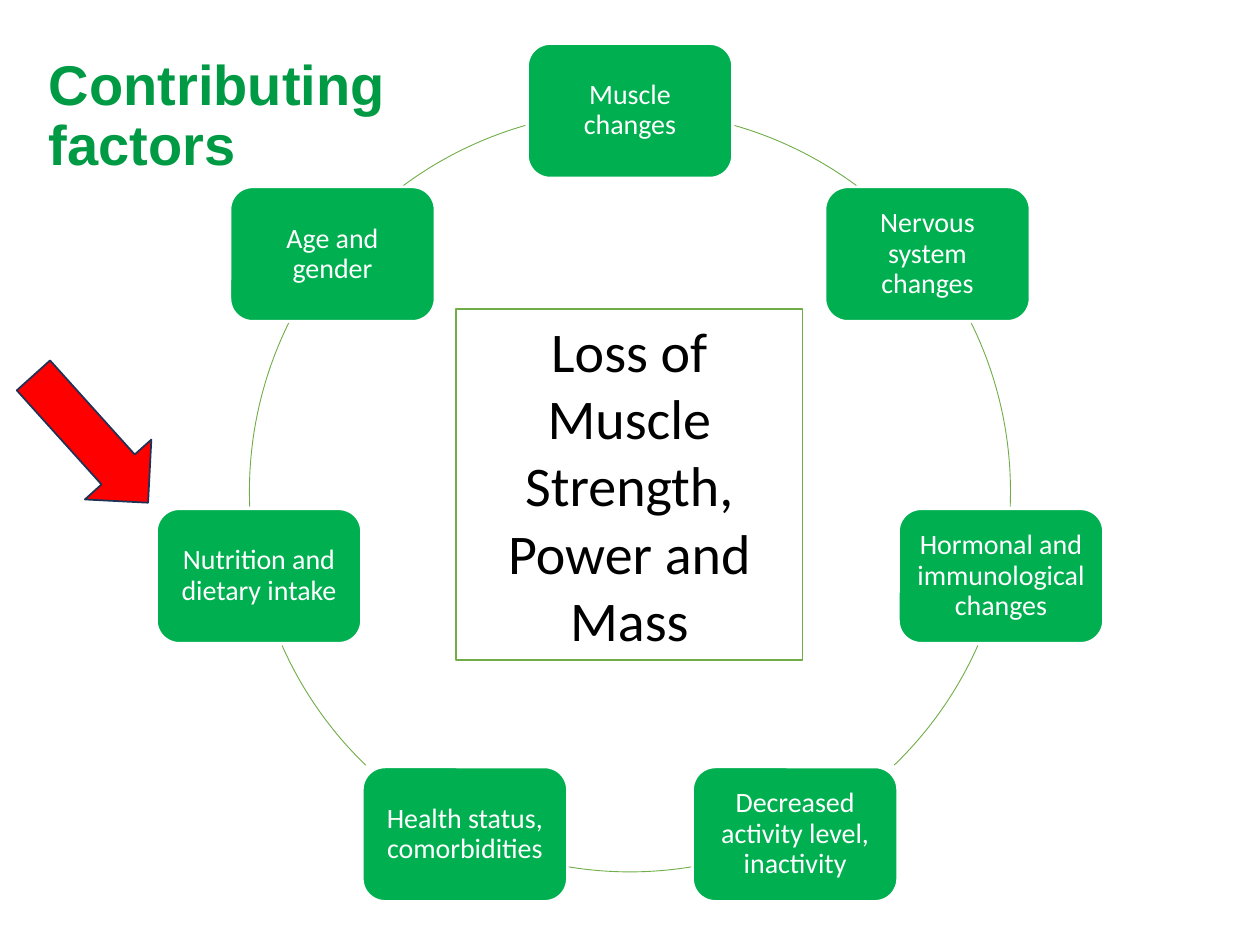
import math
from dataclasses import dataclass
from typing import Any

from pptx import Presentation
from pptx import util as u
from pptx.dml.color import RGBColor
from pptx.enum import shapes, text

COLUMNS, ROWS = 100, 75
CENTER_COLUMN, CENTER_ROW, RADIUS = 50, 39, 30.2
CARD_WIDTH, CARD_HEIGHT, GAP = 16.2, 10.6, 0.1
FACTORS = [
    "Muscle changes",
    "Nervous system changes",
    "Hormonal and immunological changes",
    "Decreased activity level, inactivity",
    "Health status, comorbidities",
    "Nutrition and dietary intake",
    "Age and gender",
]


def color(value):
    """Turn a hex string into a colour."""
    return RGBColor.from_string(value)


def ring_point(degrees):
    """Give the column and row on the ring, clockwise from the right."""
    angle = math.radians(degrees)
    return (CENTER_COLUMN + RADIUS * math.cos(angle),
            CENTER_ROW + RADIUS * math.sin(angle))


def is_clear(degrees, centers):
    """Tell whether a ring point lies outside every card."""
    column, row = ring_point(degrees)
    return all(abs(column - x) > CARD_WIDTH / 2 + GAP
               or abs(row - y) > CARD_HEIGHT / 2 + GAP for x, y in centers)


@dataclass
class Board:
    """Hold the style and the current slide."""

    deck: Any
    page: Any
    font: str = "Calibri"
    title_font: str = "Arial"
    title_color: str = "009A44"
    card_color: str = "00B050"
    ring_color: str = "70AD47"

    def frame(self, left, top, width, height):
        """Convert grid columns and rows to slide lengths."""
        column = self.deck.slide_width / COLUMNS
        row = self.deck.slide_height / ROWS
        return (u.Emu(round(left * column)), u.Emu(round(top * row)),
                u.Emu(round(width * column)), u.Emu(round(height * row)))

    def label(self, box, words, size, ink, font, align, spacing=1.0, inset=None):
        """Set and format the wrapped text of a box."""
        frame = box.text_frame
        frame.text = words
        frame.word_wrap = True
        frame.vertical_anchor = text.MSO_ANCHOR.MIDDLE
        if inset is not None:
            frame.margin_left = frame.margin_right = u.Inches(inset)
            frame.margin_top = frame.margin_bottom = u.Inches(inset)
        para = frame.paragraphs[0]
        para.alignment = align
        para.line_spacing = spacing
        span = para.runs[0]
        span.font.size = u.Pt(size)
        span.font.name = font
        span.font.color.rgb = color(ink)
        return span

    def shape(self, kind, place, fill, line, weight=1):
        """Add a flat preset shape."""
        box = self.page.shapes.add_shape(kind, *self.frame(*place))
        box.shadow.inherit = False
        if fill:
            box.fill.solid()
            box.fill.fore_color.rgb = color(fill)
        else:
            box.fill.background()
        box.line.color.rgb = color(line)
        box.line.width = u.Pt(weight)
        return box

    def title(self, words, place):
        """Add the bold slide title."""
        box = self.page.shapes.add_textbox(*self.frame(*place))
        span = self.label(box, words, 32, self.title_color, self.title_font,
                          text.PP_ALIGN.LEFT, 0.9)
        span.font.bold = True

    def card(self, words, column, row):
        """Add a factor card centred on a grid point."""
        place = (column - CARD_WIDTH / 2, row - CARD_HEIGHT / 2,
                 CARD_WIDTH, CARD_HEIGHT)
        box = self.shape(shapes.MSO_SHAPE.ROUNDED_RECTANGLE, place,
                         self.card_color, "FFFFFF")
        self.label(box, words, 16, "FFFFFF", self.font,
                   text.PP_ALIGN.CENTER, 0.9, 0.07)

    def arc(self, start, end):
        """Add the part of the ring between two angles."""
        place = (CENTER_COLUMN - RADIUS, CENTER_ROW - RADIUS,
                 2 * RADIUS, 2 * RADIUS)
        curve = self.shape(shapes.MSO_SHAPE.ARC, place, None,
                           self.ring_color, 0.5)
        for index, degrees in enumerate((start, end)):
            curve.adjustments[index] = degrees % 360 * 0.6

    def outcome(self, words, place):
        """Add the framed statement in the middle."""
        box = self.shape(shapes.MSO_SHAPE.RECTANGLE, place,
                         "FFFFFF", self.ring_color)
        self.label(box, words, 32, "000000", self.font, text.PP_ALIGN.CENTER)

    def pointer(self, place, rotation):
        """Add the red arrow that marks one card."""
        arrow = self.shape(shapes.MSO_SHAPE.RIGHT_ARROW, place,
                           "FF0000", "1E3256")
        arrow.rotation = rotation


def main():
    """Build the slide and save it."""
    deck = Presentation()
    deck.slide_width, deck.slide_height = u.Inches(10), u.Inches(7.5)
    board = Board(deck, deck.slides.add_slide(deck.slide_layouts[6]))
    board.title("Contributing factors", (2.9, 2.4, 33, 13.8))

    step = 360 / len(FACTORS)
    angles = [-90 + step * index for index in range(len(FACTORS))]
    centers = [ring_point(angle) for angle in angles]
    for words, angle, center in zip(FACTORS, angles, centers):
        board.card(words, *center)
        samples = [angle + step * tick / 200 for tick in range(201)]
        clear = [degrees for degrees in samples if is_clear(degrees, centers)]
        board.arc(clear[0], clear[-1])

    board.outcome("Loss of Muscle Strength, Power and Mass",
                  (36.2, 24.5, 27.5, 27.9))
    board.pointer((0.4, 31.3, 13.6, 7.1), 48)
    deck.save("out.pptx")


if __name__ == "__main__":
    main()
